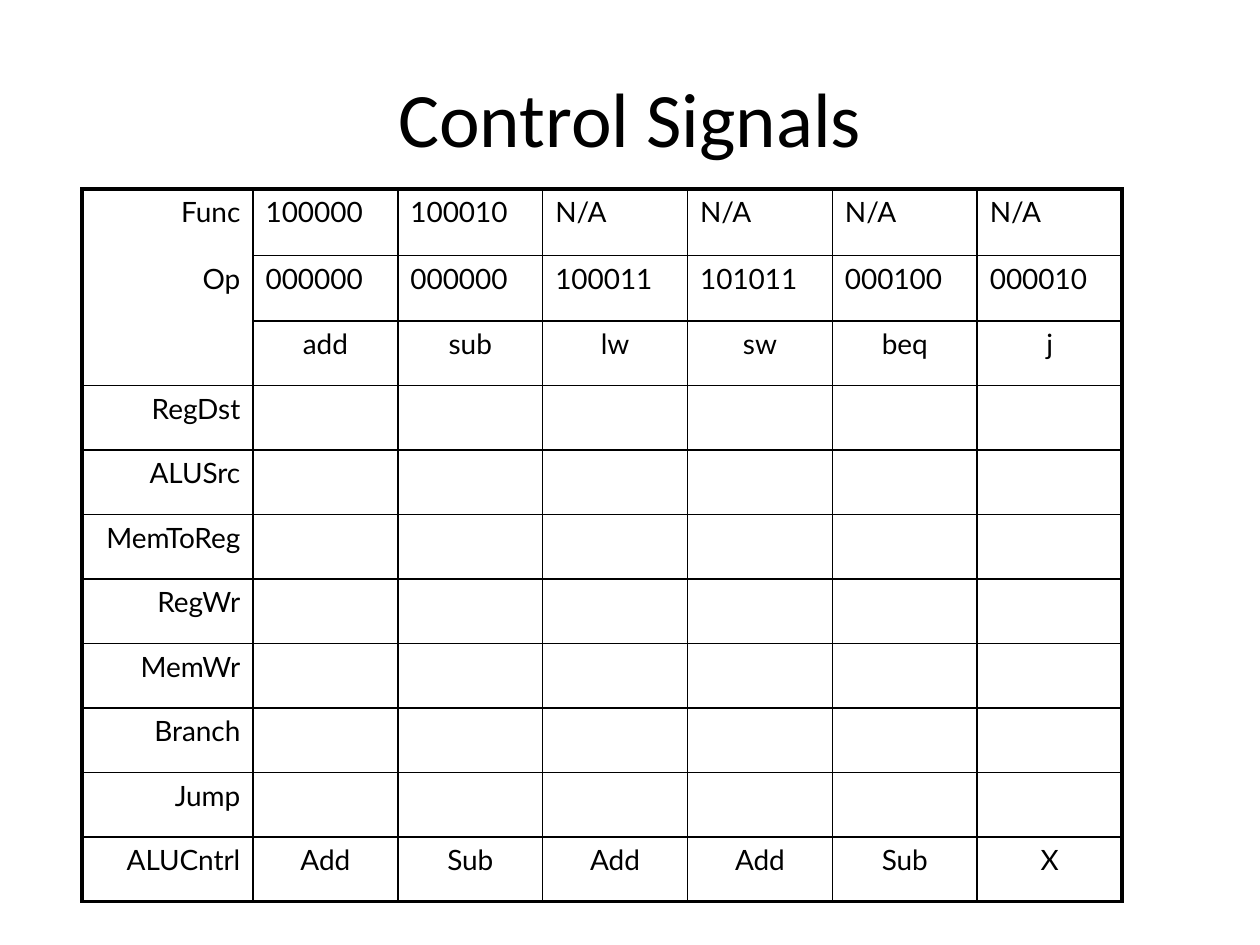
from lxml import etree
from pptx import Presentation
from pptx.dml.color import RGBColor
from pptx.enum.text import MSO_ANCHOR, PP_ALIGN
from pptx.oxml.ns import qn
from pptx.util import Cm, Pt

LEFT, CENTER, RIGHT = PP_ALIGN.LEFT, PP_ALIGN.CENTER, PP_ALIGN.RIGHT
MIDDLE = MSO_ANCHOR.MIDDLE

BLACK = "000000"
THIN, THICK = 1, 2.25

LABELS = ["Func", "Op", "", "RegDst", "ALUSrc", "MemToReg", "RegWr",
          "MemWr", "Branch", "Jump", "ALUCntrl"]
VALUES = {
    "Func": ["100000", "100010", "N/A", "N/A", "N/A", "N/A"],
    "Op": ["000000", "000000", "100011", "101011", "000100", "000010"],
    "": ["add", "sub", "lw", "sw", "beq", "j"],
    "ALUCntrl": ["Add", "Sub", "Add", "Add", "Sub", "X"],
}
CODE_ROWS = ("Func", "Op")
INSTRUCTIONS = 6
COLUMN_WIDTHS = [3.45] + [2.92] * INSTRUCTIONS
ROW_HEIGHTS = [1.34, 1.32] + [1.3] * (len(LABELS) - 2)


def rgb(color):
    return RGBColor.from_string(color)


def write(frame, text, font, size, align):
    frame.text = text
    para = frame.paragraphs[0]
    para.alignment = align
    for span in para.runs:
        span.font.name = font
        span.font.size = Pt(size)
        span.font.color.rgb = rgb(BLACK)
    return para


def space_before(para, percent):
    spacing = etree.SubElement(para._p.get_or_add_pPr(), qn("a:spcBef"))
    etree.SubElement(spacing, qn("a:spcPct"), val=str(percent * 1000))


def set_borders(cell, widths):
    """Draw the left, right, top and bottom borders; a width of 0 hides one."""
    properties = cell._tc.get_or_add_tcPr()
    for side, width in zip("LRTB", widths):
        line = etree.SubElement(properties, qn(f"a:ln{side}"), w=str(Pt(width)))
        if width:
            fill = etree.SubElement(line, qn("a:solidFill"))
            etree.SubElement(fill, qn("a:srgbClr"), val=BLACK)
        else:
            etree.SubElement(line, qn("a:noFill"))


def border_widths(row, column):
    """Thick around the table, none between the three heading labels."""
    last_row, last_column = len(LABELS) - 1, INSTRUCTIONS
    left = THICK if column == 0 else THIN
    right = THICK if column == last_column else THIN
    top = THICK if row == 0 else THIN
    bottom = THICK if row == last_row else THIN
    if column == 0 and row in (1, 2):
        top = 0
    if column == 0 and row in (0, 1):
        bottom = 0
    return left, right, top, bottom


def add_title(page, left, top, width, height):
    box = page.shapes.add_textbox(Cm(left), Cm(top), Cm(width), Cm(height))
    frame = box.text_frame
    frame.word_wrap = True
    frame.vertical_anchor = MIDDLE
    write(frame, "Control Signals", "Calibri", 44, CENTER)


def add_signal_table(page, left, top):
    table = page.shapes.add_table(
        len(LABELS), len(COLUMN_WIDTHS), Cm(left), Cm(top),
        Cm(sum(COLUMN_WIDTHS)), Cm(sum(ROW_HEIGHTS))).table
    table.first_row = False
    table.horz_banding = False
    for column, width in zip(table.columns, COLUMN_WIDTHS):
        column.width = Cm(width)
    for row, height in zip(table.rows, ROW_HEIGHTS):
        row.height = Cm(height)

    for row, label in enumerate(LABELS):
        texts = [label] + VALUES.get(label, [""] * INSTRUCTIONS)
        value_align = LEFT if label in CODE_ROWS else CENTER
        for column, text in enumerate(texts):
            cell = table.cell(row, column)
            set_borders(cell, border_widths(row, column))
            cell.fill.background()
            if text:
                align = value_align if column else RIGHT
                para = write(cell.text_frame, text, "Lato", 16, align)
                space_before(para, 20)


def main():
    deck = Presentation()
    deck.slide_width, deck.slide_height = Cm(25.4), Cm(19.05)
    page = deck.slides.add_slide(deck.slide_layouts[6])
    add_title(page, 1.27, 0.76, 22.86, 3.18)
    add_signal_table(page, 1.65, 3.81)
    deck.save("out.pptx")


if __name__ == "__main__":
    main()
